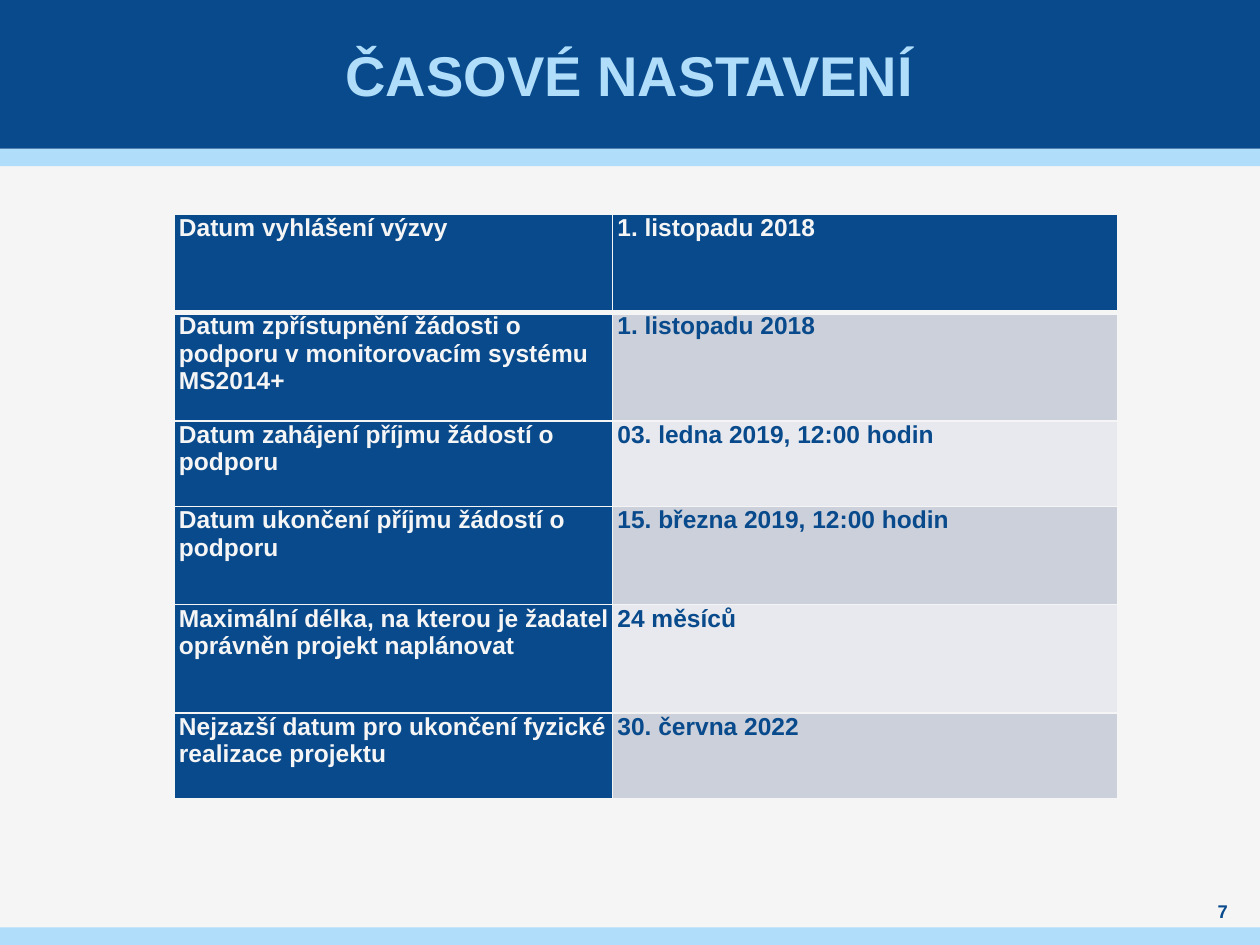
from lxml import etree
from pptx import Presentation
from pptx.dml.color import RGBColor
from pptx.enum import shapes, text
from pptx.oxml.ns import qn
from pptx.util import Inches, Pt

NAVY, SKY, PAPER = "084A8B", "AFDDFA", "F5F5F5"
BANDS = ["E7E9EE", "CCD0DA"]

TITLE = "ČASOVÉ NASTAVENÍ"
PAGE_NUMBER = "7"
STRIPES = [(1.18, 0.14, SKY), (0, 1.18, NAVY), (7.36, 0.14, SKY)]  # top, height, colour
DATES = [
    ("Datum vyhlášení výzvy", "1. listopadu 2018"),
    ("Datum zpřístupnění žádosti o podporu v monitorovacím systému MS2014+",
     "1. listopadu 2018"),
    ("Datum zahájení příjmu žádostí o podporu", "03. ledna 2019, 12:00 hodin"),
    ("Datum ukončení příjmu žádostí o podporu", "15. března 2019, 12:00 hodin"),
    ("Maximální délka, na kterou je žadatel oprávněn projekt naplánovat", "24 měsíců"),
    ("Nejzazší datum pro ukončení fyzické realizace projektu", "30. června 2022"),
]
COLUMN_WIDTHS = [3.48, 4.01]
ROW_HEIGHTS = [0.78, 0.86, 0.68, 0.78, 0.86, 0.68]


def rgb(value):
    return RGBColor.from_string(value)


def paint(target, colour):
    target.fill.solid()
    target.fill.fore_color.rgb = rgb(colour)


def write(frame, words, size, colour, align, **frame_format):
    for name, value in frame_format.items():
        setattr(frame, name, value)
    frame.text = words
    paragraph = frame.paragraphs[0]
    paragraph.alignment = align
    font_format = {"name": "Arial", "size": Pt(size), "bold": True}
    for name, value in font_format.items():
        setattr(paragraph.runs[0].font, name, value)
    paragraph.runs[0].font.color.rgb = rgb(colour)
    return paragraph


def add_border(cell, side, width):
    line = etree.SubElement(cell._tc.get_or_add_tcPr(), qn(f"a:ln{side}"), w=str(Pt(width)))
    fill = etree.SubElement(line, qn("a:solidFill"))
    etree.SubElement(fill, qn("a:srgbClr"), val=PAPER)


def add_dates(slide):
    frame = slide.shapes.add_table(
        len(DATES), len(COLUMN_WIDTHS), Inches(1.38), Inches(1.7),
        Inches(sum(COLUMN_WIDTHS)), Inches(sum(ROW_HEIGHTS)))
    table = frame.table
    for column, width in zip(table.columns, COLUMN_WIDTHS):
        column.width = Inches(width)
    for row, height in zip(table.rows, ROW_HEIGHTS):
        row.height = Inches(height)
    for r, date in enumerate(DATES):
        for c, words in enumerate(date):
            cell = table.cell(r, c)
            dark = r == 0 or c == 0
            for side in ("left", "right", "top", "bottom"):
                setattr(cell, f"margin_{side}", 0)
            paragraph = write(cell.text_frame, words, 14, PAPER if dark else NAVY,
                              text.PP_ALIGN.LEFT)
            paragraph.space_after = Pt(3)
            indent = paragraph._p.get_or_add_pPr()
            indent.set("marL", str(Inches(0.04)))
            indent.set("indent", "0")
            widths = {"L": 1, "R": 1, "T": 3 if r == 1 else 1, "B": 3 if r == 0 else 1}
            for side, width in widths.items():
                add_border(cell, side, width)
            paint(cell, NAVY if dark else BANDS[r % 2])


def main():
    deck = Presentation()
    deck.slide_width, deck.slide_height = Inches(10), Inches(7.5)
    slide = deck.slides.add_slide(deck.slide_layouts[5])
    paint(slide.background, PAPER)

    title = slide.shapes.title
    for top, height, colour in STRIPES:
        stripe = slide.shapes.add_shape(
            shapes.MSO_SHAPE.RECTANGLE, 0, Inches(top), deck.slide_width, Inches(height))
        stripe.shadow.inherit = False
        stripe.line.fill.background()
        paint(stripe, colour)
        title._element.addprevious(stripe._element)

    place = {"left": 0.39, "top": 0, "width": 9.21, "height": 1.18}
    for name, value in place.items():
        setattr(title, name, Inches(value))
    centred = {"vertical_anchor": text.MSO_ANCHOR.MIDDLE, "word_wrap": True,
               "auto_size": text.MSO_AUTO_SIZE.NONE, "margin_top": 0, "margin_bottom": 0}
    write(title.text_frame, TITLE, 32, SKY, text.PP_ALIGN.CENTER,
          margin_left=Inches(0.04), margin_right=Inches(0.04), **centred)

    number = slide.shapes.add_textbox(Inches(9.45), Inches(7.13), Inches(0.51), Inches(0.2))
    write(number.text_frame, PAGE_NUMBER, 10.5, NAVY, text.PP_ALIGN.CENTER,
          margin_left=0, margin_right=0, **centred)

    add_dates(slide)
    deck.save("out.pptx")


if __name__ == "__main__":
    main()
